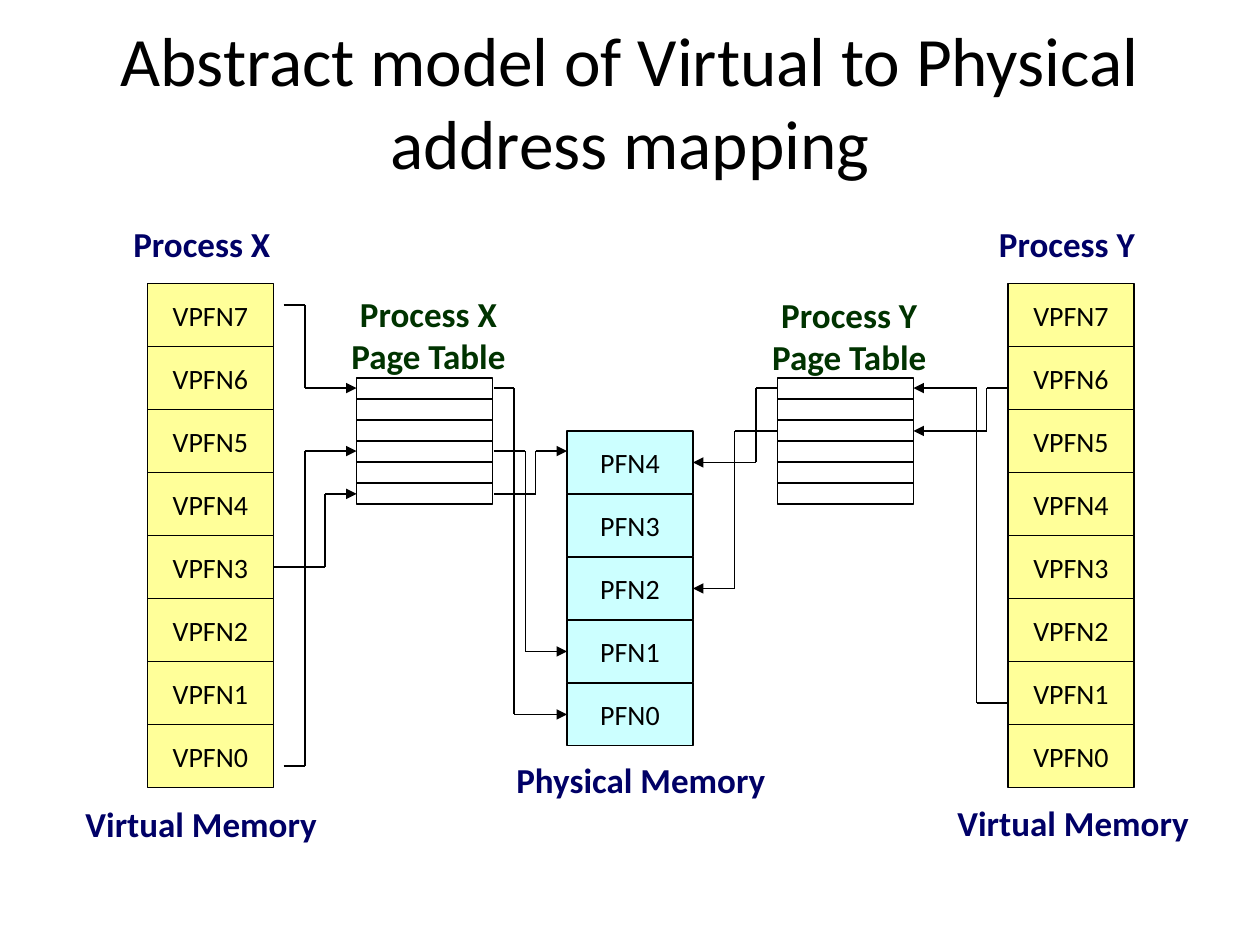
from pptx import Presentation
from pptx.dml.color import RGBColor
from pptx.enum.shapes import MSO_CONNECTOR, MSO_SHAPE
from pptx.enum.text import MSO_ANCHOR, PP_ALIGN
from pptx.oxml.ns import qn
from pptx.util import Inches, Pt
from lxml import etree

# Content
TITLE = "Abstract model of Virtual to Physical address mapping"
COLORS = {"virtual": "FFFF99", "physical": "CCFFFF", "ink": "000000",
          "memory": "000066", "table": "003300"}
VPFNS = [f"VPFN{n}" for n in range(7, -1, -1)]
PFNS = [f"PFN{n}" for n in range(4, -1, -1)]
MEMORIES = [  # left, top, fill, frame names
    (1.17, 2.25, "virtual", VPFNS),
    (8, 2.25, "virtual", VPFNS),
    (4.5, 3.42, "physical", PFNS),
]
PAGE_TABLES = [(2.83, 3), (6.17, 3)]
ROUTES = [  # start x, start y, bend x, end x, end y
    # Process X virtual memory to its page table
    (2.25, 2.42, 2.42, 2.83, 3.08),
    (2.25, 6.08, 2.42, 2.83, 3.58),
    (2.17, 4.5, 2.58, 2.83, 3.92),
    # Process Y virtual memory to its page table
    (8, 3.08, 7.83, 7.25, 3.42),
    (8, 5.58, 7.75, 7.25, 3.08),
    # Process X page table to physical memory
    (3.92, 3.08, 4.08, 4.5, 5.67),
    (3.92, 3.58, 4.17, 4.5, 5.17),
    (3.92, 3.92, 4.25, 4.5, 3.58),
    # Process Y page table to physical memory
    (6.17, 3.08, 6, 5.5, 3.67),
    (6.17, 3.42, 5.83, 5.5, 4.67),
]
LABELS = [  # left, top, width, height, color, lines
    (0.96, 1.72, 1.37, 0.43, "memory", ["Process X"]),
    (7.83, 1.72, 1.37, 0.43, "memory", ["Process Y"]),
    (2.64, 2.27, 1.52, 0.77, "table", ["Process X", "Page Table"]),
    (5.98, 2.28, 1.52, 0.77, "table", ["Process Y", "Page Table"]),
    (0.58, 6.32, 2.15, 0.43, "memory", ["Virtual Memory"]),
    (7.5, 6.31, 2.15, 0.43, "memory", ["Virtual Memory"]),
    (4, 5.97, 2.27, 0.43, "memory", ["Physical Memory"]),
]
CELL_W, CELL_H = 1, 0.5
TABLE_W, TABLE_H, TABLE_ROWS = 1.08, 1, 6
LINE_WIDTH = Pt(0.75)
TITLE_FONT = {"name": "Calibri", "size": Pt(39.6)}
CELL_FONT = {"name": "Calibri", "size": Pt(16)}
LABEL_FONT = {"name": "Calibri", "size": Pt(20), "bold": True}


def rgb(color):
    return RGBColor.from_string(COLORS[color])


def write(tf, lines, font, color="ink", align=PP_ALIGN.CENTER):
    for i, line in enumerate(lines):
        p = tf.paragraphs[0] if i == 0 else tf.add_paragraph()
        p.alignment = align
        r = p.add_run()
        r.text = line
        for name, value in font.items():
            setattr(r.font, name, value)
        r.font.color.rgb = rgb(color)


def add_box(left, top, width, height, fill=None):
    sp = s.shapes.add_shape(MSO_SHAPE.RECTANGLE, Inches(left), Inches(top),
                            Inches(width), Inches(height))
    sp.shadow.inherit = False
    sp.line.color.rgb = rgb("ink")
    sp.line.width = LINE_WIDTH
    if fill:
        sp.fill.solid()
        sp.fill.fore_color.rgb = rgb(fill)
    else:
        sp.fill.background()
    return sp


def add_line(start, end, arrow=False):
    line = s.shapes.add_connector(MSO_CONNECTOR.STRAIGHT,
                                  *map(Inches, start + end))
    line.line.color.rgb = rgb("ink")
    line.line.width = LINE_WIDTH
    if arrow:
        etree.SubElement(line.line._get_or_add_ln(), qn("a:tailEnd"),
                         type="triangle")
    etree.SubElement(line._element.spPr, qn("a:effectLst"))
    if start in side_middles:
        line.begin_connect(*side_middles[start])
    if end in side_middles:
        line.end_connect(*side_middles[end])


prs = Presentation()
prs.slide_width, prs.slide_height = Inches(10), Inches(7.5)
s = prs.slides.add_slide(prs.slide_layouts[5])

# Title
title = s.shapes.title
title.left, title.top = Inches(0.75), Inches(0.17)
title.width, title.height = Inches(8.5), Inches(1.25)
title.text_frame.vertical_anchor = MSO_ANCHOR.MIDDLE
write(title.text_frame, [TITLE], TITLE_FONT)

# Memory columns; side middles are kept for joining the arrows
side_middles = {}
for left, top, fill, frames in MEMORIES:
    for i, frame in enumerate(frames):
        y = top + i * CELL_H
        sp = add_box(left, y, CELL_W, CELL_H, fill)
        sp.text_frame.word_wrap = False
        sp.text_frame.vertical_anchor = MSO_ANCHOR.MIDDLE
        write(sp.text_frame, [frame], CELL_FONT)
        middle = round(y + CELL_H / 2, 2)
        side_middles[(left, middle)] = (sp, 1)
        side_middles[(round(left + CELL_W, 2), middle)] = (sp, 3)

# Page tables
for left, top in PAGE_TABLES:
    add_box(left, top, TABLE_W, TABLE_H)
    for row in range(1, TABLE_ROWS):
        y = top + row * TABLE_H / TABLE_ROWS
        add_line((left, y), (left + TABLE_W, y))

# Mapping arrows: across, along the bend, across to the target
for x1, y1, bend, x2, y2 in ROUTES:
    add_line((x1, y1), (bend, y1))
    add_line((bend, y1), (bend, y2))
    add_line((bend, y2), (x2, y2), arrow=True)

# Labels
for left, top, width, height, color, lines in LABELS:
    box = s.shapes.add_textbox(Inches(left), Inches(top),
                               Inches(width), Inches(height))
    box.text_frame.word_wrap = False
    align = PP_ALIGN.CENTER if len(lines) > 1 else PP_ALIGN.LEFT
    write(box.text_frame, lines, LABEL_FONT, color, align)

prs.save("out.pptx")
